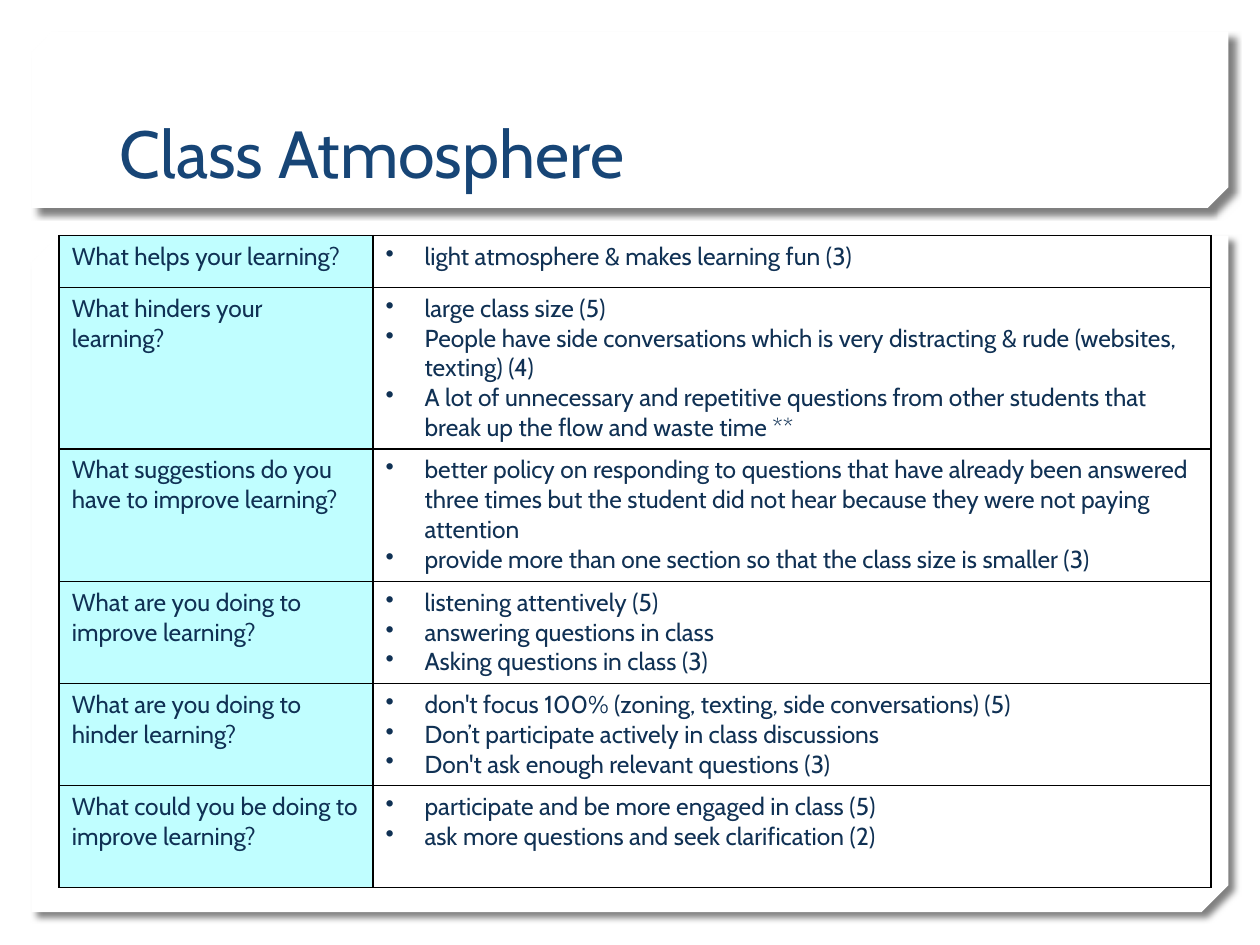
import pptx
import pptx.util
from lxml import etree
from pptx.dml.color import RGBColor
from pptx.enum.shapes import MSO_SHAPE
from pptx.enum.text import MSO_ANCHOR, PP_ALIGN
from pptx.oxml.ns import qn
from pptx.util import Inches, Pt

COLORS = {"title": "174576", "text": "103154", "label": "C0FEFF",
          "card": "FFFFFF", "line": "000000", "shadow": "000000"}
FONT = "Cabin"
ROWS = [
    (0.41, "What helps your learning?",
     ["light atmosphere & makes learning fun (3)"]),
    (1.28, "What hinders your learning?",
     ["large class size (5)",
      "People have side conversations which is very distracting & rude "
      "(websites, texting) (4)",
      "A lot of unnecessary and repetitive questions from other students "
      "that break up the flow and waste time **"]),
    (1.05, "What suggestions do you have to improve learning?",
     ["better policy on responding to questions that have already been "
      "answered three times but the student did not hear because they were "
      "not paying attention",
      "provide more than one section so that the class size is smaller (3)"]),
    (0.81, "What are you doing to improve learning?",
     ["listening attentively (5)", "answering questions in class",
      "Asking questions in class (3)"]),
    (0.81, "What are you doing to hinder learning?",
     ["don't focus 100% (zoning, texting, side conversations) (5)",
      "Don’t participate actively in class discussions",
      "Don't ask enough relevant questions (3)"]),
    (0.81, "What could you be doing to improve learning?",
     ["participate and be more engaged in class (5)",
      "ask more questions and seek clarification (2)"]),
]


def rgb(name):
    return RGBColor.from_string(COLORS[name])


def add_node(parent, tag, **attrs):
    node = etree.SubElement(parent, qn(tag))
    for key, value in attrs.items():
        node.set(key, str(value))
    return node


def write(frame, lines, size=14, color="text", bullet=False):
    """Fill a text frame with one paragraph per line."""
    for i, line in enumerate(lines):
        para = frame.paragraphs[0] if i == 0 else frame.add_paragraph()
        para.alignment = PP_ALIGN.LEFT
        run = para.add_run()
        run.text = line
        run.font.name = FONT
        run.font.size = Pt(size)
        run.font.color.rgb = rgb(color)
        if bullet:
            props = para._p.get_or_add_pPr()
            props.set("marL", str(Inches(0.31)))
            props.set("indent", str(-Inches(0.31)))
            add_node(props, "a:buChar", char="•")


def add_card(slide, left, top, width, height, snip):
    """White panel with a cut lower right corner and a soft shadow."""
    card = slide.shapes.add_shape(MSO_SHAPE.SNIP_2_DIAG_RECTANGLE,
                                  left, top, width, height)
    card.adjustments[0] = 0
    card.adjustments[1] = snip
    card.fill.solid()
    card.fill.fore_color.rgb = rgb("card")
    card.line.fill.background()
    props = card._element.spPr
    props.find(qn("a:xfrm")).set("flipV", "1")
    shadow = add_node(add_node(props, "a:effectLst"), "a:outerShdw",
                      blurRad=Pt(4), dist=Pt(5), dir=45 * 60000,
                      algn="tl", rotWithShape=0)
    color = add_node(shadow, "a:srgbClr", val=COLORS["shadow"])
    add_node(color, "a:alpha", val=50000)


def add_header(slide, left, top, width, height):
    add_card(slide, left, top, width, height, 0.117)
    title = slide.shapes.title
    title.left, title.top = left + Inches(0.6), top + Inches(0.07)
    title.width, title.height = Inches(8.29), Inches(1.25)
    title.text_frame.vertical_anchor = MSO_ANCHOR.BOTTOM
    write(title.text_frame, ["Class Atmosphere"], size=38, color="title")
    slide.shapes._spTree.append(title._element)  # in front of its card


def add_borders(cell):
    props = cell._tc.get_or_add_tcPr()
    for side in ("a:lnL", "a:lnR", "a:lnT", "a:lnB"):
        line = add_node(props, side, w=Pt(1))
        add_node(add_node(line, "a:solidFill"), "a:srgbClr",
                 val=COLORS["line"])


def add_answers(slide, left, top, width, height):
    add_card(slide, left, top, width, height, 0.04)
    total = sum(row[0] for row in ROWS)
    table = slide.shapes.add_table(len(ROWS), 2, left + Inches(0.22), top,
                                   Inches(9.14), Inches(total)).table
    table.first_row = table.horz_banding = False
    table.columns[0].width = Inches(2.49)
    table.columns[1].width = Inches(6.65)
    for i, (tall, label, answers) in enumerate(ROWS):
        table.rows[i].height = Inches(tall)
        question, reply = table.cell(i, 0), table.cell(i, 1)
        for cell in (question, reply):
            add_borders(cell)
        question.fill.solid()
        question.fill.fore_color.rgb = rgb("label")
        reply.fill.background()
        write(question.text_frame, [label])
        write(reply.text_frame, answers, bullet=True)


def main():
    deck = pptx.Presentation()
    deck.slide_width, deck.slide_height = Inches(10), Inches(7.5)
    slide = deck.slides.add_slide(deck.slide_layouts[5])
    left, width = Inches(0.25), Inches(9.5)
    add_header(slide, left, Inches(0.25), width, Inches(1.4))
    add_answers(slide, left, Inches(1.87), width, Inches(5.37))
    deck.save("out.pptx")


if __name__ == "__main__":
    main()
